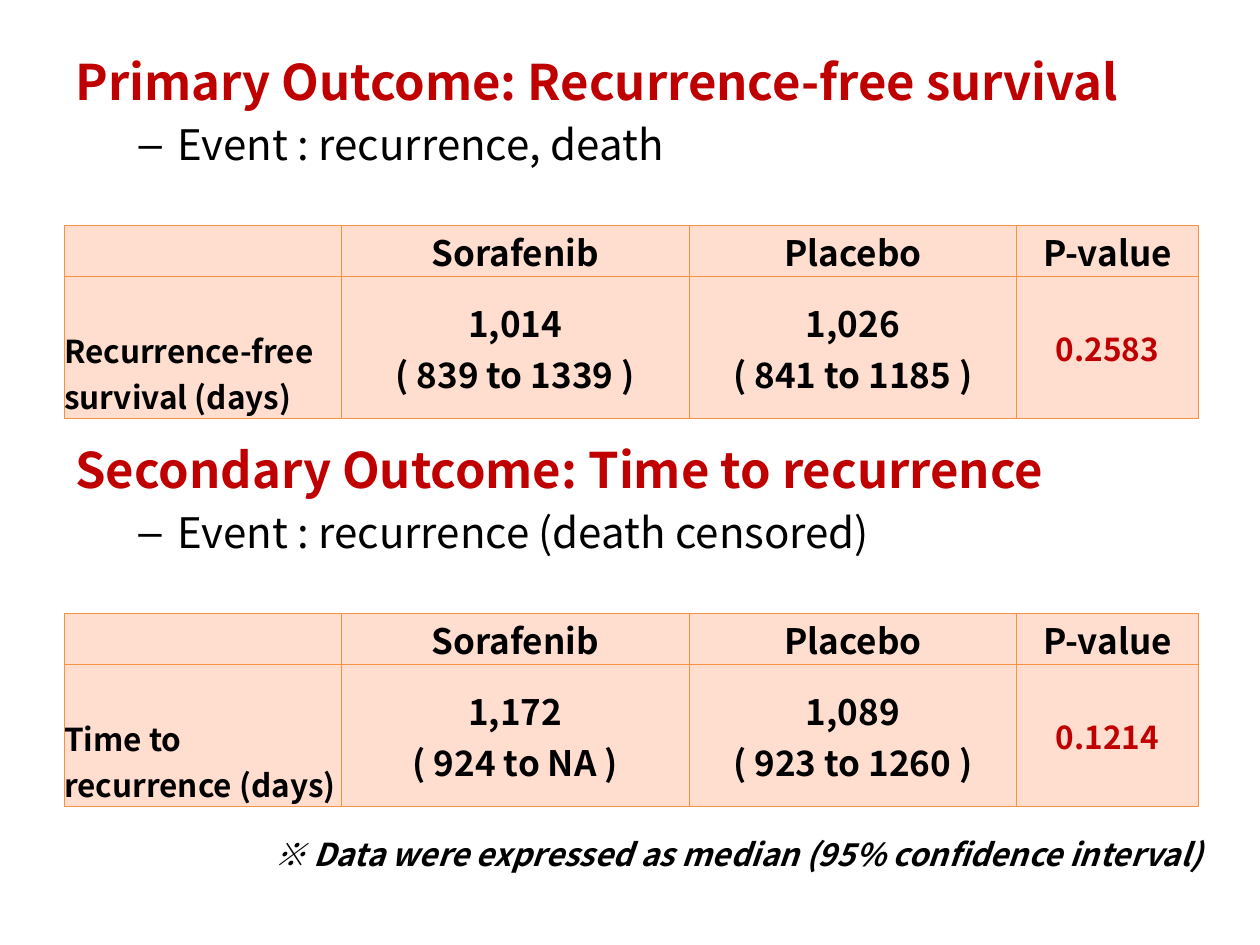
from lxml.etree import SubElement
from pptx import Presentation
from pptx.dml.color import RGBColor
from pptx.enum.text import MSO_ANCHOR as Anchor, MSO_AUTO_SIZE as AutoSize, PP_ALIGN as Align
from pptx.oxml.ns import qn
from pptx.util import Inches, Pt

WIDTH, HEIGHT = 10, 7.5
FONT = "Noto Sans CJK KR"
COLORS = {"accent": "C00000", "text": "000000", "cell": "FFDDCF", "border": "F69240"}
LEFT, SPAN = 0.05 * WIDTH, 0.9 * WIDTH
COLUMNS = [2.2, 2.76, 2.6, 1.44]
ROWS = [0.4, 1.13]
HEADERS = ["", "Sorafenib", "Placebo", "P-value"]
TABLE_OFFSET = 1.43  # from the top of a section heading to its table
SECTIONS = [
    (0.36, "Primary Outcome: Recurrence-free survival", "Event : recurrence, death",
     ["Recurrence-free survival (days)", "1,014\n( 839 to 1339 )",
      "1,026\n( 841 to 1185 )", "0.2583"]),
    (3.44, "Secondary Outcome: Time to recurrence", "Event : recurrence (death censored)",
     ["Time to\nrecurrence (days)", "1,172\n( 924 to NA )",
      "1,089\n( 923 to 1260 )", "0.1214"]),
]


def add_span(para, text, size, color="text", bold=True, italic=False):
    span = para.add_run()
    span.text = text
    font = span.font
    font.name, font.size, font.bold, font.italic = FONT, Pt(size), bold, italic
    font.color.rgb = RGBColor.from_string(COLORS[color])
    SubElement(font._element, qn("a:ea"), typeface=FONT)


def place(box, left, top, width, height):
    box.left, box.top = Inches(left), Inches(top)
    box.width, box.height = Inches(width), Inches(height)


def set_bullet(para, char=None, margin=0.0, indent=0.0):
    props = para._p.get_or_add_pPr()
    props.set("marL", str(Inches(margin)))
    props.set("indent", str(Inches(indent)))
    if char:
        SubElement(props, qn("a:buFont"), typeface="Arial")
        SubElement(props, qn("a:buChar"), char=char)
    else:
        SubElement(props, qn("a:buNone"))


def fill_heading(box, top, heading, event):
    place(box, LEFT, top, SPAN, 1.26)
    frame = box.text_frame
    frame.word_wrap, frame.auto_size = True, AutoSize.NONE
    frame.vertical_anchor = Anchor.TOP
    para = frame.paragraphs[0]
    para.space_before = Pt(5.6)
    set_bullet(para)
    add_span(para, heading, 28, "accent")
    para = frame.add_paragraph()
    para.level, para.space_before = 1, Pt(4.8)
    set_bullet(para, "–", 0.81, -0.31)
    add_span(para, event, 24, bold=False)


def style_cell(cell):
    cell.margin_left = cell.margin_right = cell.margin_top = cell.margin_bottom = 0
    cell.vertical_anchor = Anchor.MIDDLE
    props = cell._tc.get_or_add_tcPr()
    for side in ("lnL", "lnR", "lnT", "lnB"):
        line = SubElement(props, qn(f"a:{side}"), w=str(Pt(0.75)))
        paint = SubElement(line, qn("a:solidFill"))
        SubElement(paint, qn("a:srgbClr"), val=COLORS["border"])
    cell.fill.solid()
    cell.fill.fore_color.rgb = RGBColor.from_string(COLORS["cell"])


def fill_cell(cell, text, size, color, align):
    for number, line in enumerate(text.split("\n")):
        frame = cell.text_frame
        para = frame.add_paragraph() if number else frame.paragraphs[0]
        para.alignment = align
        if line:
            add_span(para, line, size, color)


def add_results(page, top, values):
    table = page.shapes.add_table(
        len(ROWS), len(COLUMNS), Inches(0.51), Inches(top),
        Inches(sum(COLUMNS)), Inches(sum(ROWS))).table
    table.first_row = table.horz_banding = False
    for column, width in zip(table.columns, COLUMNS):
        column.width = Inches(width)
    for row, height in zip(table.rows, ROWS):
        row.height = Inches(height)
    last = len(COLUMNS) - 1
    for r, texts in enumerate((HEADERS, values)):
        for c, text in enumerate(texts):
            cell = table.cell(r, c)
            style_cell(cell)
            size = 18 if r and c in (0, last) else 20
            color = "accent" if r and c == last else "text"
            fill_cell(cell, text, size, color, Align.CENTER if c else Align.LEFT)
    # The row label sits one line lower than the values
    table.cell(1, 0).margin_top = Inches(ROWS[0])


def add_footnote(page):
    box = page.shapes.add_textbox(Inches(2.08), Inches(6.58), Inches(7.73), Inches(0.4))
    box.text_frame.word_wrap = True
    add_span(box.text_frame.paragraphs[0],
             "※ Data were expressed as median (95% confidence interval)", 18, italic=True)


def main():
    deck = Presentation()
    deck.slide_width, deck.slide_height = Inches(WIDTH), Inches(HEIGHT)
    page = deck.slides.add_slide(deck.slide_layouts[1])

    # The first heading uses the body placeholder; there is no slide title
    title = page.shapes.title._element
    title.getparent().remove(title)
    body = page.placeholders[1]

    # One heading and one table per outcome
    for number, (top, heading, event, values) in enumerate(SECTIONS):
        box = page.shapes.add_textbox(0, 0, 0, 0) if number else body
        fill_heading(box, top, heading, event)
        add_results(page, top + TABLE_OFFSET, values)

    add_footnote(page)
    deck.save("out.pptx")


if __name__ == "__main__":
    main()
